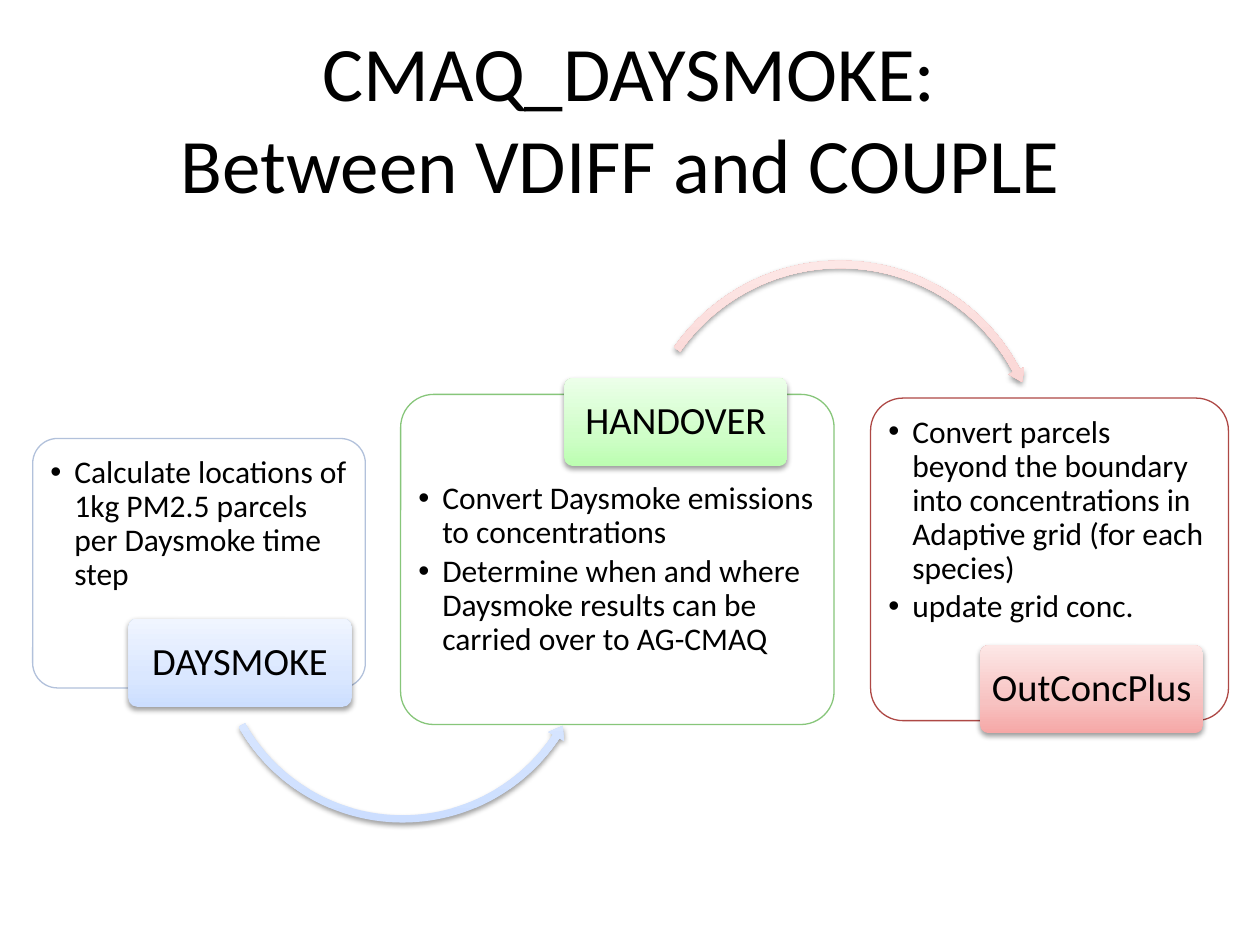
from dataclasses import dataclass
from lxml.etree import SubElement
from pptx import Presentation
from pptx.dml.color import RGBColor
from pptx.enum.shapes import MSO_SHAPE
from pptx.enum.text import MSO_ANCHOR, MSO_AUTO_SIZE, PP_ALIGN
from pptx.oxml import parse_xml
from pptx.oxml.ns import nsdecls, qn
from pptx.util import Inches, Pt


@dataclass(frozen=True)
class Theme:
    font: str = "Calibri"
    text: str = "000000"
    card: str = "FFFFFF"
    blue: tuple = ("CCDEFF", "DAE7FF", "F0F5FF")
    green: tuple = ("BCFEB1", "CFFEC8", "ECFFE9")
    red: tuple = ("F6A7A6", "F7C2C1", "FDE7E6")
    title_size: float = 44
    label_size: float = 22
    list_size: float = 18


THEME = Theme()
CENTRED = dict(alignment=PP_ALIGN.CENTER)

STAGES = [
    dict(box=(0.26, 3.48, 2.64, 1.98), line="B2C1DB", list_span=(0, 1.55),
         label="DAYSMOKE", label_at=(0.76, 1.43), tones=THEME.blue,
         items=["Calculate locations of 1kg PM2.5 parcels per Daysmoke time step"]),
    dict(box=(3.18, 3.13, 3.44, 2.62), line="87C67A", list_span=(0.56, 2.06),
         label="HANDOVER", label_at=(1.3, -0.13), tones=THEME.green,
         items=["Convert Daysmoke emissions to concentrations",
                "Determine when and where Daysmoke results can be carried over to AG-CMAQ"]),
    dict(box=(6.91, 3.16, 2.84, 2.56), line="AE4845", list_span=(0, 2.01),
         label="OutConcPlus", label_at=(0.87, 1.96), tones=THEME.red,
         items=["Convert parcels beyond the boundary into concentrations in "
                "Adaptive grid (for each species)", "update grid conc."]),
]

ARROWS = [
    dict(kind=MSO_SHAPE.LEFT_CIRCULAR_ARROW, box=(1.66, 3.5, 3.07, 3.07), tones=THEME.blue,
         bends=(0.019, 2.321, 20.154, 90.323, 0.023)),
    dict(kind=MSO_SHAPE.CIRCULAR_ARROW, box=(5.02, 2.03, 3.3, 3.3), tones=THEME.red,
         bends=(0.018, 2.157, 199.312, 128.979, 0.021)),
]


def set_attrs(obj, values):
    for name, value in values.items():
        setattr(obj, name, value)


def place(sp, box):
    set_attrs(sp, dict(zip(("left", "top", "width", "height"), map(Inches, box))))


def format_frame(tf, anchor, inset_x, inset_y, wrap=True):
    set_attrs(tf, dict(auto_size=MSO_AUTO_SIZE.NONE, word_wrap=wrap, vertical_anchor=anchor,
                       margin_left=Inches(inset_x), margin_right=Inches(inset_x),
                       margin_top=Inches(inset_y), margin_bottom=Inches(inset_y)))


def write(p, text, size, layout):
    set_attrs(p, layout)
    p.text = text
    for r in p.runs:
        set_attrs(r.font, dict(name=THEME.font, size=Pt(size), bold=False))
        r.font.color.rgb = RGBColor.from_string(THEME.text)


def add_shape(s, kind, box, bends):
    sp = s.shapes.add_shape(kind, *map(Inches, box))
    for i, bend in enumerate(bends):
        sp.adjustments[i] = bend
    sp.shadow.inherit = False
    return sp


def add_glossy(s, kind, box, bends, tones):
    sp = add_shape(s, kind, box, bends)
    sp.line.fill.background()
    stops = "".join(f'<a:gs pos="{pos}"><a:srgbClr val="{tone}"/></a:gs>'
                    for pos, tone in zip((0, 35000, 100000), tones))
    props = sp._element.spPr
    props.find(qn("a:prstGeom")).addnext(parse_xml(
        f'<a:gradFill {nsdecls("a")} rotWithShape="1"><a:gsLst>{stops}</a:gsLst>'
        '<a:lin ang="16200000" scaled="0"/></a:gradFill>'))
    props.find(qn("a:effectLst")).append(parse_xml(
        f'<a:outerShdw {nsdecls("a")} blurRad="40000" dist="20000" dir="5400000" '
        'rotWithShape="0"><a:srgbClr val="000000"><a:alpha val="38000"/></a:srgbClr>'
        '</a:outerShdw>'))
    return sp


def add_title(s, box):
    sp = s.shapes.title
    place(sp, box)
    format_frame(sp.text_frame, MSO_ANCHOR.MIDDLE, 0.1, 0.05)
    write(sp.text_frame.paragraphs[0], "CMAQ_DAYSMOKE:\vBetween VDIFF and COUPLE ",
          THEME.title_size, CENTRED)


def add_card(s, box, line):
    sp = add_shape(s, MSO_SHAPE.ROUNDED_RECTANGLE, box, [0.1])
    sp.fill.solid()
    sp.fill.fore_color.rgb = RGBColor.from_string(THEME.card)
    tone = sp._element.spPr.find(qn("a:solidFill"))[0]
    SubElement(tone, qn("a:alpha"), val="90000")
    sp.line.color.rgb = RGBColor.from_string(line)
    sp.line.width = Pt(0.75)


def fill_list(s, body, box, items):
    place(body, box)
    s.shapes._spTree.append(body._element)
    tf = body.text_frame
    format_frame(tf, MSO_ANCHOR.TOP, 0.14, 0.14)
    for i, item in enumerate(items):
        p = tf.add_paragraph() if i else tf.paragraphs[0]
        pPr = p._p.get_or_add_pPr()
        pPr.set("marL", str(Inches(0.19)))
        pPr.set("indent", str(Inches(-0.19)))
        SubElement(pPr, qn("a:buChar"), char="•")
        write(p, item, THEME.list_size,
              dict(level=1, alignment=PP_ALIGN.LEFT, line_spacing=0.9,
                   space_before=Pt(0), space_after=Pt(2.7)))


def add_label(s, box, text, tones):
    sp = add_glossy(s, MSO_SHAPE.ROUNDED_RECTANGLE, box, [0.1], tones)
    format_frame(sp.text_frame, MSO_ANCHOR.MIDDLE, 0.05, 0.03, wrap=False)
    write(sp.text_frame.paragraphs[0], text, THEME.label_size, CENTRED | dict(line_spacing=0.9))


def add_stage(s, body, box, line, list_span, label, label_at, tones, items):
    left, top, width, height = box
    offset, list_height = list_span
    dx, dy = label_at
    add_card(s, box, line)
    fill_list(s, body, (left, top + offset, width, list_height), items)
    add_label(s, (left + dx, top + dy, 1.77, 0.7), label, tones)


def main():
    prs = Presentation()
    prs.slide_width, prs.slide_height = Inches(10), Inches(7.5)
    s = prs.slides.add_slide(prs.slide_layouts.get_by_name("Comparison"))
    title, *bodies, spare = s.placeholders
    spare._element.getparent().remove(spare._element)
    add_title(s, (1.33, 0.3, 7.33, 1.25))
    for body, stage in zip(bodies, STAGES):
        add_stage(s, body, **stage)
    for arrow in ARROWS:
        add_glossy(s, **arrow)
    prs.save("out.pptx")


if __name__ == "__main__":
    main()
